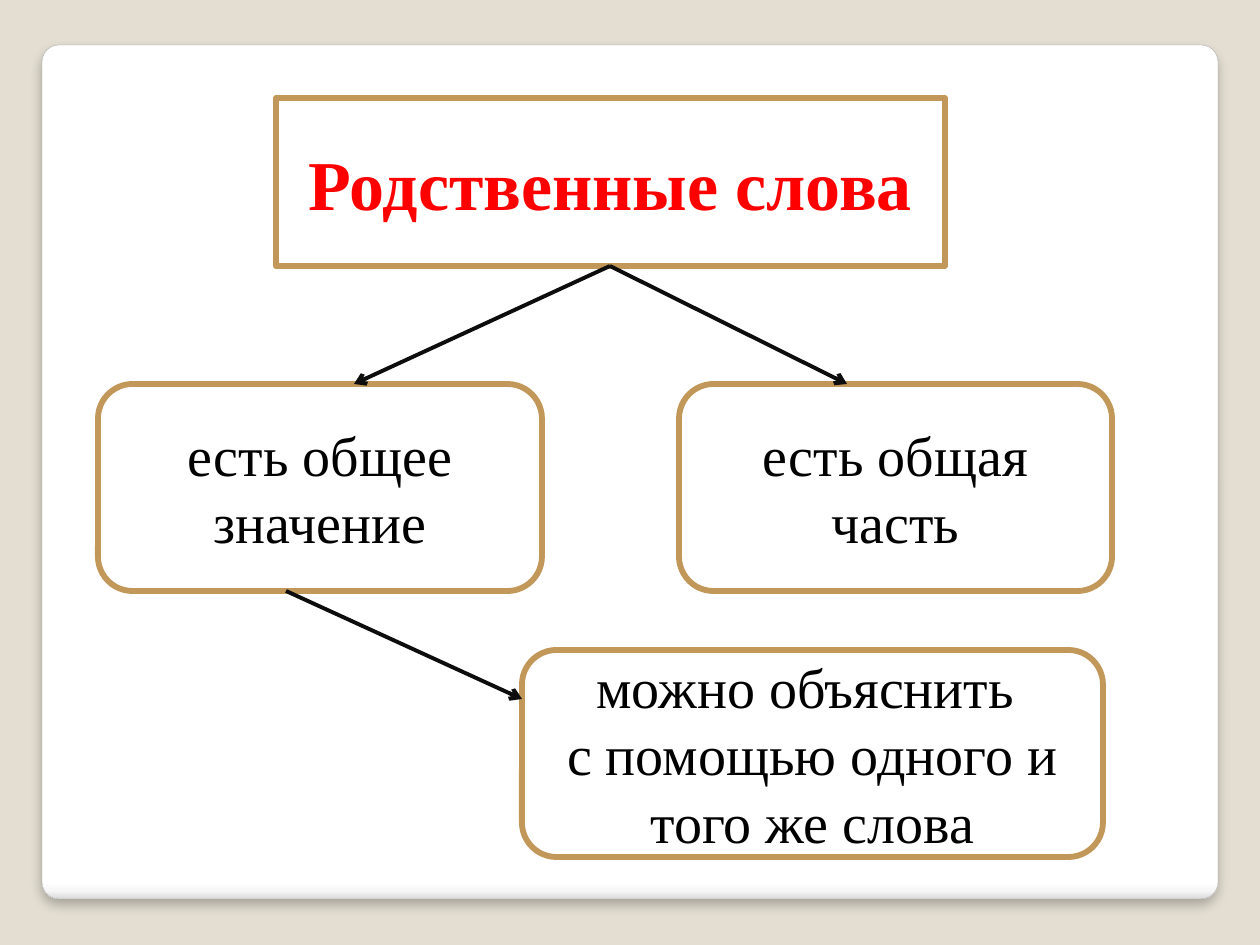
from lxml.etree import SubElement
from pptx import Presentation
from pptx.dml.color import RGBColor
from pptx.enum.shapes import MSO_CONNECTOR, MSO_SHAPE
from pptx.enum.text import MSO_ANCHOR, PP_ALIGN
from pptx.oxml.ns import qn
from pptx.util import Emu, Pt

BACKGROUND = RGBColor(0xE3, 0xDE, 0xD1)
WHITE = RGBColor(0xFF, 0xFF, 0xFF)
BLACK = RGBColor(0x00, 0x00, 0x00)
RED = RGBColor(0xFF, 0x00, 0x00)
TAN = RGBColor(0xC1, 0x98, 0x59)
GREY = RGBColor(0xA4, 0xA4, 0xA4)
INK = RGBColor(0x0D, 0x0D, 0x0D)
CARD_STOPS = [(0, WHITE), (98, WHITE), (99, RGBColor(0xF7, 0xF7, 0xF7)),
              (100, RGBColor(0xDA, 0xDA, 0xDA))]
FONT = "Times New Roman"


def px(n):
    """Turn px at 126 to the inch into EMU."""
    return Emu(round(n * 914400 / 126))


def add_shape(s, kind, box, line, width):
    """Add a preset shape with the given outline and no shadow."""
    sp = s.shapes.add_shape(kind, *map(px, box))
    sp.shadow.inherit = False
    sp.line.color.rgb = line
    sp.line.width = Pt(width)
    return sp


def add_card(s, box):
    """Add the white card with a shaded lower edge and a soft shadow."""
    sp = add_shape(s, MSO_SHAPE.ROUNDED_RECTANGLE, box, GREY, 0.16)
    sp.adjustments[0] = 0.02
    sp.fill.gradient()
    sp.fill.gradient_angle = 270
    props = sp.element.spPr
    stops = props.find(".//" + qn("a:gsLst"))
    for stop in list(stops):
        stops.remove(stop)
    for pos, color in CARD_STOPS:
        stop = SubElement(stops, qn("a:gs"), pos=str(pos * 1000))
        SubElement(stop, qn("a:srgbClr"), val=str(color))
    shadow = SubElement(props.find(qn("a:effectLst")), qn("a:outerShdw"),
                        blurRad=str(Pt(6)), dist=str(Pt(4)),
                        dir="5400000", algn="t", rotWithShape="0")
    color = SubElement(shadow, qn("a:srgbClr"), val=str(BLACK))
    SubElement(color, qn("a:alpha"), val="25000")


def add_node(s, box, lines, kind=MSO_SHAPE.ROUNDED_RECTANGLE,
             size=32, color=BLACK, bold=False):
    """Add an outlined box with centred text, one paragraph per line."""
    sp = add_shape(s, kind, box, TAN, 3.35)
    sp.fill.solid()
    sp.fill.fore_color.rgb = WHITE
    tf = sp.text_frame
    tf.word_wrap = True
    tf.vertical_anchor = MSO_ANCHOR.MIDDLE
    tf.text = "\n".join(lines)
    for p in tf.paragraphs:
        p.alignment = PP_ALIGN.CENTER
        p.font.name = FONT
        p.font.size = Pt(size)
        p.font.bold = bold
        p.font.color.rgb = color


def add_arrow(s, start, end):
    """Add a dark arrow from start to end."""
    c = s.shapes.add_connector(MSO_CONNECTOR.STRAIGHT, *map(px, start + end))
    c.line.color.rgb = INK
    c.line.width = Pt(2.25)
    SubElement(c.line._get_or_add_ln(), qn("a:tailEnd"), type="arrow")
    SubElement(c.element.spPr, qn("a:effectLst"))


def add_diagram(s, x, y):
    """Add the word diagram with its top left corner at x, y."""
    nodes_top, node_h = y + 286, 207
    nodes_bottom = nodes_top + node_h
    title_bottom = y + 168
    add_node(s, (x + 178, y, 669, 168), ["Родственные слова"],
             MSO_SHAPE.RECTANGLE, 40, RED, True)
    add_node(s, (x + 424, y + 552, 581, node_h),
             ["можно объяснить ", "с помощью одного и того же слова"])
    add_node(s, (x + 581, nodes_top, 433, node_h), ["есть общая часть"])
    add_node(s, (x, nodes_top, 444, node_h), ["есть общее значение"])
    for end in (256, 749):
        add_arrow(s, (x + 512, title_bottom), (x + end, nodes_top))
    add_arrow(s, (x + 188, nodes_bottom), (x + 424, y + 601))


def main():
    """Build and save the slide."""
    prs = Presentation()
    prs.slide_width, prs.slide_height = px(1260), px(945)
    s = prs.slides.add_slide(prs.slide_layouts[6])
    s.background.fill.solid()
    s.background.fill.fore_color.rgb = BACKGROUND
    add_card(s, (42, 45, 1176, 854))
    add_diagram(s, 98, 98)
    prs.save("out.pptx")


if __name__ == "__main__":
    main()
